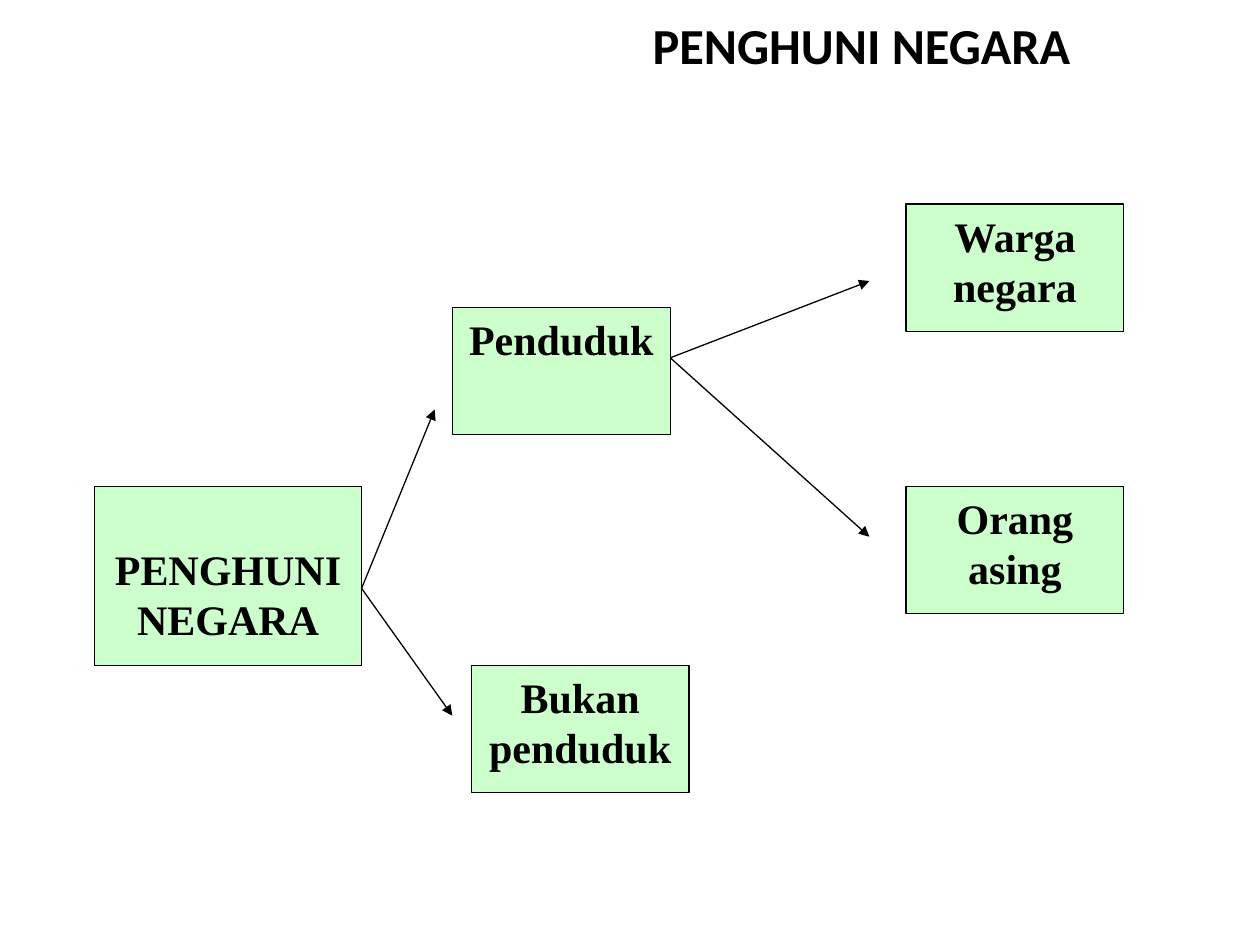
from pptx import Presentation
from pptx.dml.color import RGBColor
from pptx.enum.shapes import MSO_CONNECTOR, MSO_SHAPE
from pptx.enum.text import MSO_ANCHOR, PP_ALIGN
from pptx.oxml.ns import qn
from pptx.util import Inches, Pt
from lxml.etree import SubElement


def color(code):
    return RGBColor.from_string(code)


class Chart:
    ink = "000000"
    paper = "CCFFCC"
    head = {"name": "Calibri", "size": Pt(28.8), "bold": True}
    body = {"name": "Times New Roman", "size": Pt(24), "bold": True}

    def __init__(self, slide):
        self.slide = slide

    def label(self, shape, text, style, top, right=0.1):
        frame = shape.text_frame
        form = {"word_wrap": True, "vertical_anchor": MSO_ANCHOR.TOP,
                "margin_left": Inches(0.1), "margin_right": Inches(right),
                "margin_top": Inches(top), "margin_bottom": Inches(0.05)}
        for key, value in form.items():
            setattr(frame, key, value)
        frame.text = text
        for para in frame.paragraphs:
            para.alignment = PP_ALIGN.CENTER
            for run in para.runs:
                for key, value in style.items():
                    setattr(run.font, key, value)
                run.font.color.rgb = color(self.ink)

    def title(self, text, *area):
        shape = self.slide.shapes.add_textbox(*map(Inches, area))
        self.label(shape, text, self.head, 0.14, 0.22)

    def box(self, text, left, top, width=1.73, height=1.01, inset=0.05):
        area = map(Inches, (left, top, width, height))
        shape = self.slide.shapes.add_shape(MSO_SHAPE.RECTANGLE, *area)
        shape.shadow.inherit = False
        shape.fill.solid()
        shape.fill.fore_color.rgb = color(self.paper)
        self.stroke(shape.line)
        self.label(shape, text, self.body, inset)

    def arrow(self, start, end):
        ends = map(Inches, start + end)
        link = self.slide.shapes.add_connector(MSO_CONNECTOR.STRAIGHT, *ends)
        self.stroke(link.line)
        props = link._element.spPr
        SubElement(props.find(qn("a:ln")), qn("a:tailEnd"), type="triangle")
        SubElement(props, qn("a:effectLst"))

    def stroke(self, line):
        line.color.rgb = color(self.ink)
        line.width = Pt(0.75)


def main():
    deck = Presentation()
    deck.slide_width, deck.slide_height = Inches(10), Inches(7.5)
    chart = Chart(deck.slides.add_slide(deck.slide_layouts[6]))

    # Title
    chart.title("PENGHUNI NEGARA", 2.4, -0.03, 9, 1.25)

    # Boxes: the root, then its branches
    chart.box("PENGHUNI\nNEGARA", 0.75, 3.86, 2.12, 1.42, inset=0.45)
    for text, left, top in (("Penduduk", 3.59, 2.44),
                            ("Bukan penduduk", 3.74, 5.28),
                            ("Orang asing", 7.19, 3.86),
                            ("Warga negara", 7.19, 1.62)):
        chart.box(text, left, top)

    # Arrows: two from each parent
    forks = {(2.87, 4.67): ((3.59, 5.68), (3.45, 3.25)),
             (5.32, 2.84): ((6.9, 2.23), (6.9, 4.26))}
    for start, ends in forks.items():
        for end in ends:
            chart.arrow(start, end)

    deck.save("out.pptx")


if __name__ == "__main__":
    main()
